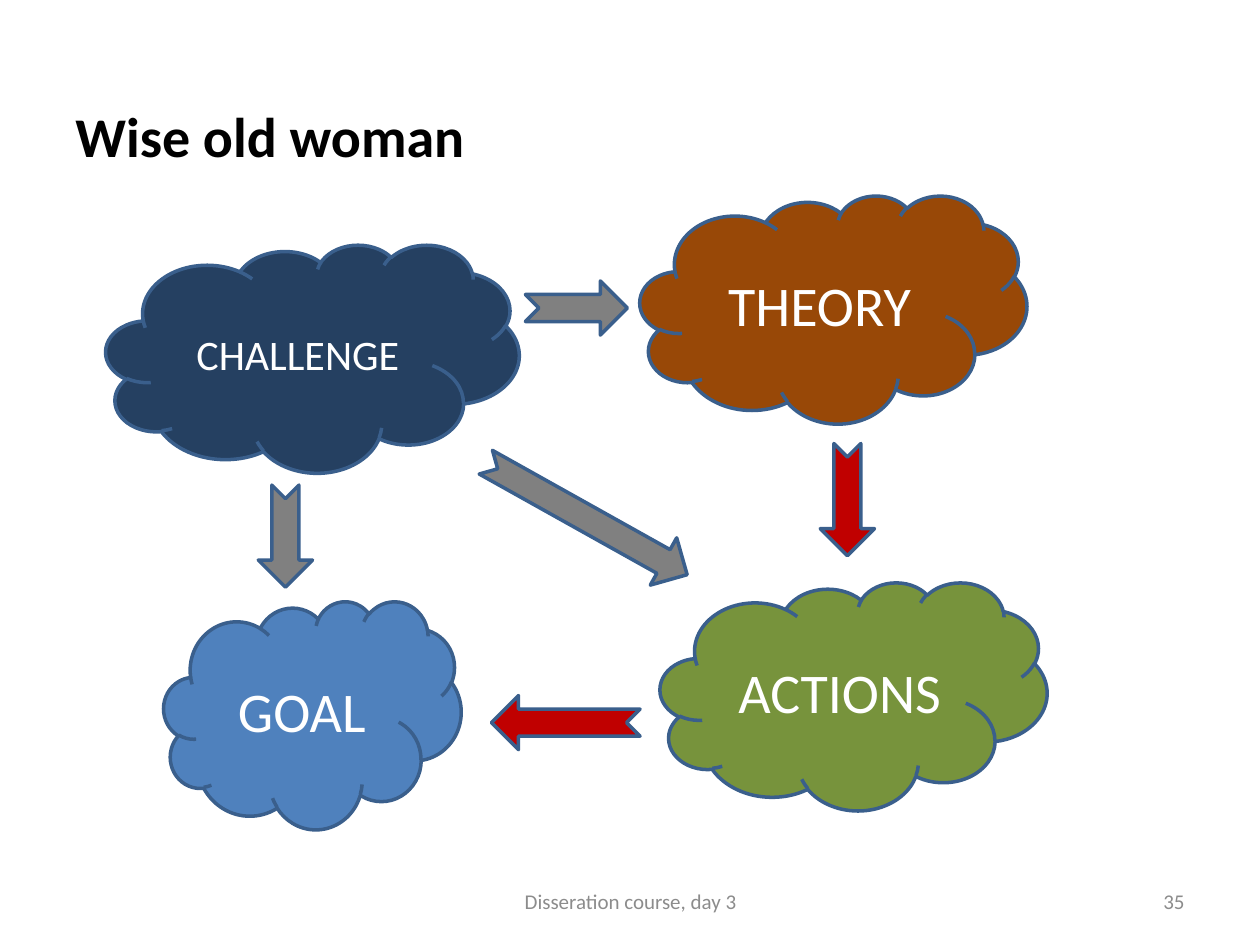
from dataclasses import dataclass

from pptx import Presentation
from pptx.dml.color import RGBColor
from pptx.enum.shapes import MSO_SHAPE
from pptx.enum.text import MSO_ANCHOR, PP_ALIGN
from pptx.util import Inches, Pt


@dataclass(frozen=True)
class Theme:
    font: str = "Calibri"
    ink: str = "000000"
    light: str = "FFFFFF"
    muted: str = "8C8C8C"
    outline: str = "3A5F8C"
    challenge: str = "254061"
    theory: str = "984807"
    actions: str = "77933C"
    goal: str = "4F81BD"
    neutral_arrow: str = "808080"
    red_arrow: str = "C00000"
    large: int = 32
    medium: int = 24
    small: int = 12
    outline_width: int = 2


theme = Theme()
presentation = Presentation()
presentation.slide_width = Inches(10)
presentation.slide_height = Inches(7.5)
slide = presentation.slides.add_slide(presentation.slide_layouts[6])
column = presentation.slide_width / 100
row = presentation.slide_height / 75


def write(shape, text, size, color, alignment, anchor=MSO_ANCHOR.MIDDLE, bold=False):
    frame = shape.text_frame
    frame.word_wrap = True
    frame.vertical_anchor = anchor
    paragraph = frame.paragraphs[0]
    paragraph.alignment = alignment
    run = paragraph.add_run()
    run.text = text
    run.font.name = theme.font
    run.font.size = Pt(size)
    run.font.bold = bold
    run.font.color.rgb = RGBColor.from_string(color)


def add_figure(preset, left, top, width, height, fill):
    shape = slide.shapes.add_shape(
        preset, int(left * column), int(top * row), int(width * column), int(height * row)
    )
    shape.shadow.inherit = False
    shape.fill.solid()
    shape.fill.fore_color.rgb = RGBColor.from_string(fill)
    shape.line.color.rgb = RGBColor.from_string(theme.outline)
    shape.line.width = Pt(theme.outline_width)
    return shape


cloud_height = 18.1
clouds = [
    ("GOAL", 13, 47.7, 23.6, theme.goal, theme.large),
    ("ACTIONS", 52.4, 46.2, 30.7, theme.actions, theme.large),
    ("THEORY", 50.8, 15.5, 30.7, theme.theory, theme.large),
    ("CHALLENGE", 8.4, 19.4, 32.8, theme.challenge, theme.medium),
]
for label, left, top, width, fill, size in clouds:
    cloud = add_figure(MSO_SHAPE.CLOUD, left, top, width, cloud_height, fill)
    write(cloud, label, size, theme.light, PP_ALIGN.CENTER)

arrow_height = 4.3
arrows = [
    (39, 55.2, 11.8, 180, theme.red_arrow),
    (62.8, 37.5, 8.9, 90, theme.red_arrow),
    (41.7, 22.3, 8.1, 0, theme.neutral_arrow),
    (37.4, 39, 18.3, 29.2, theme.neutral_arrow),
    (18.6, 40.4, 8.1, 90, theme.neutral_arrow),
]
for left, top, width, rotation, fill in arrows:
    arrow = add_figure(MSO_SHAPE.NOTCHED_RIGHT_ARROW, left, top, width, arrow_height, fill)
    arrow.rotation = rotation

labels = [
    ("Wise old woman", 5, 7.6, 90, 7.9, theme.large, theme.ink, PP_ALIGN.LEFT, MSO_ANCHOR.TOP, True),
    ("35", 71.7, 69.5, 23.3, 4, theme.small, theme.muted, PP_ALIGN.RIGHT, MSO_ANCHOR.MIDDLE, False),
    ("Disseration course, day 3", 34.2, 69.5, 31.7, 4, theme.small, theme.muted,
     PP_ALIGN.CENTER, MSO_ANCHOR.MIDDLE, False),
]
for text, left, top, width, height, size, color, alignment, anchor, bold in labels:
    box = slide.shapes.add_textbox(
        int(left * column), int(top * row), int(width * column), int(height * row)
    )
    write(box, text, size, color, alignment, anchor, bold)

presentation.save("out.pptx")
